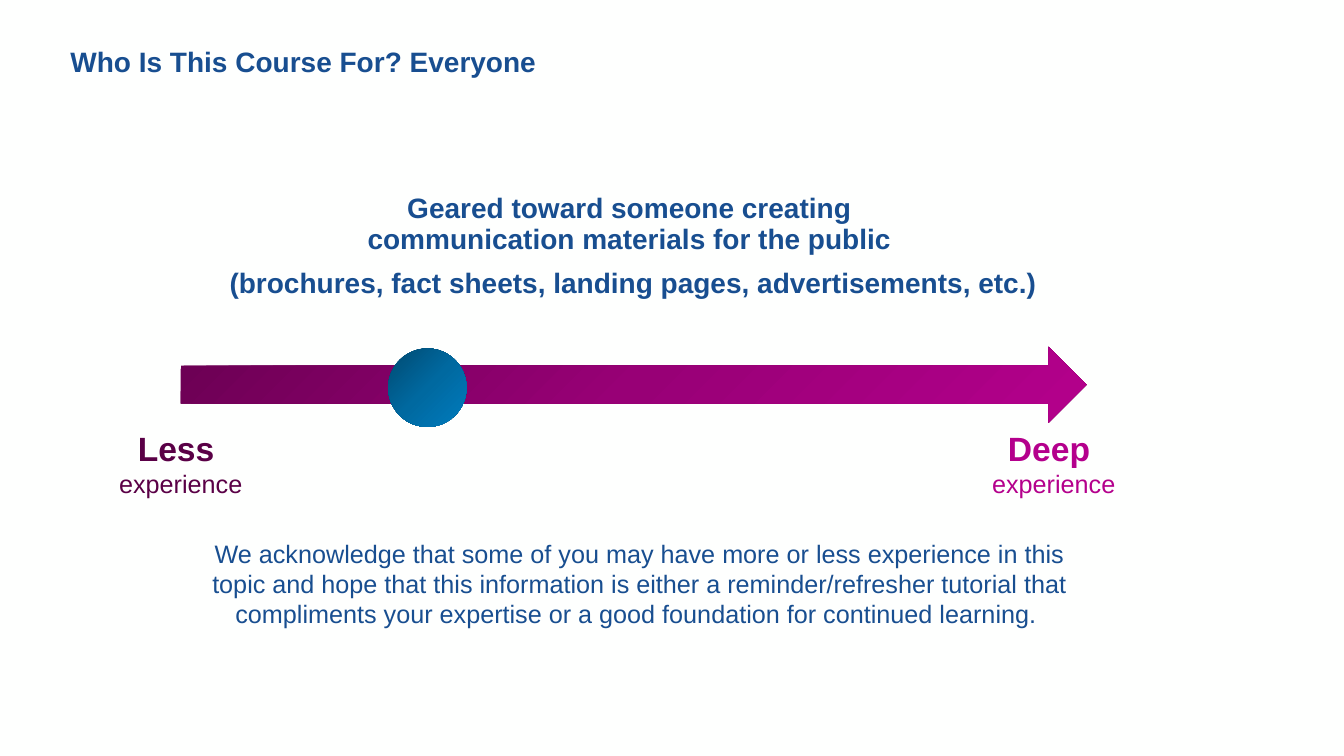
"""Build the slide that places the course audience on an experience scale."""
from copy import deepcopy

from pptx import Presentation
from pptx.dml.color import RGBColor
from pptx.enum.shapes import MSO_SHAPE as Shape
from pptx.enum.text import MSO_ANCHOR as Anchor, MSO_AUTO_SIZE as AutoSize, PP_ALIGN as Align
from pptx.oxml.ns import qn
from pptx.util import Cm, Pt

NAVY, PLUM, MAGENTA = "184E90", "5A0046", "B4008C"


def color(value):
    return RGBColor.from_string(value)


def write(box, lines, size=18, fill=NAVY, bold=False, align=Align.CENTER,
          spacing=1.0, before=0, anchor=Anchor.TOP):
    frame = box.text_frame
    frame.word_wrap = True
    frame.auto_size = AutoSize.NONE
    frame.vertical_anchor = anchor
    frame.text = "\n".join(lines)
    for index, paragraph in enumerate(frame.paragraphs):
        paragraph.alignment = align
        paragraph.line_spacing = spacing
        paragraph.space_before = Pt(before if index else 0)
        for run in paragraph.runs:
            run.font.name = "Arial"
            run.font.size = Pt(size)
            run.font.bold = bold
            run.font.color.rgb = color(fill)


presentation = Presentation()
presentation.slide_width, presentation.slide_height = Cm(33.87), Cm(19.05)
slide = presentation.slides.add_slide(presentation.slide_layouts[5])
slide.background.fill.solid()
slide.background.fill.fore_color.rgb = color("FEFFFE")

title = slide.shapes.title
title.left, title.top, title.width, title.height = Cm(1.52), Cm(-0.25), Cm(29.21), Cm(3.68)
write(title, ["Who Is This Course For? Everyone"], size=20, bold=True,
      align=Align.LEFT, spacing=0.9, anchor=Anchor.MIDDLE)

audience = slide.shapes.add_textbox(Cm(5.05), Cm(4.78), Cm(21.82), Cm(3.58))
write(audience, [
    "Geared toward someone creating \vcommunication materials for the public ",
    "(brochures, fact sheets, landing pages, advertisements, etc.)",
], size=20, bold=True, spacing=0.9, before=10)

scale_parts = [
    (Shape.RIGHT_ARROW, 4.55, 8.74, 22.83, 1.91, ["6B0053", "980076", MAGENTA]),
    (Shape.OVAL, 9.78, 8.78, 1.98, 1.98, ["004A71", "0069A0", "007CBE"]),
]
for preset, left, top, width, height, stop_colors in scale_parts:
    shape = slide.shapes.add_shape(preset, Cm(left), Cm(top), Cm(width), Cm(height))
    shape.shadow.inherit = False
    shape.line.fill.background()
    shape.fill.gradient()
    shape.fill.gradient_angle = 315
    stop_list = shape._element.spPr.find(".//" + qn("a:gsLst"))
    stop_list.insert(1, deepcopy(stop_list[0]))
    for index, (stop, stop_color) in enumerate(zip(shape.fill.gradient_stops, stop_colors)):
        stop.position = index / 2
        stop.color.rgb = color(stop_color)

for level, left, fill in [("Less ", 1.8, PLUM), ("Deep ", 23.8, MAGENTA)]:
    label = slide.shapes.add_textbox(Cm(left), Cm(10.67), Cm(5.51), Cm(2.06))
    write(label, [level, "experience"], fill=fill)
    heading = label.text_frame.paragraphs[0].runs[0].font
    heading.size, heading.bold = Pt(24), True

note = slide.shapes.add_textbox(Cm(4.7), Cm(13.44), Cm(22.83), Cm(2.57))
write(note, [
    "We acknowledge that some of you may have more or less experience in this topic "
    "and hope that this information is either a reminder/refresher tutorial that "
    "compliments your expertise or a good foundation for continued learning. "
])

presentation.save("out.pptx")
